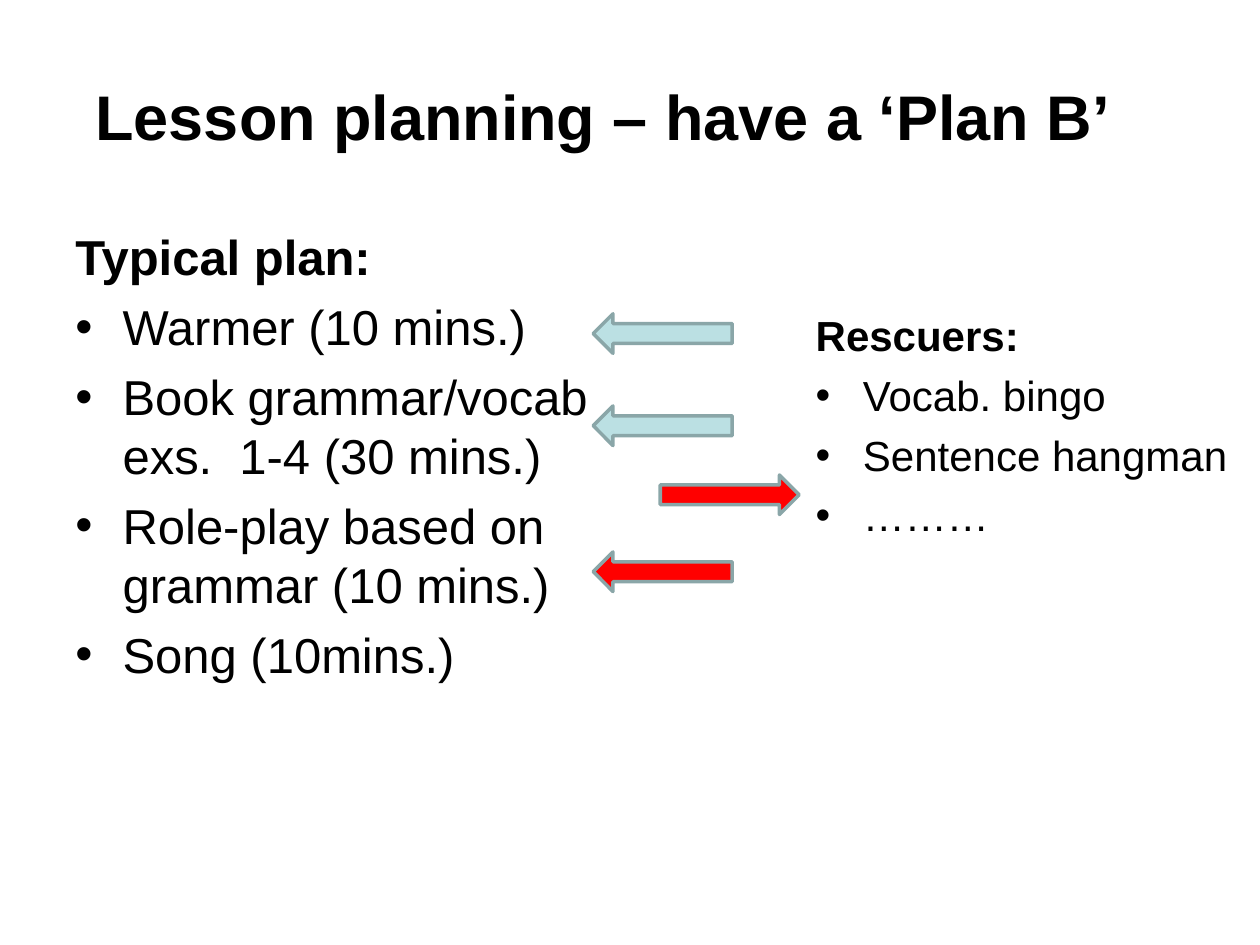
from dataclasses import dataclass

from lxml import etree
from pptx import Presentation
from pptx.dml.color import RGBColor
from pptx.enum.shapes import MSO_SHAPE
from pptx.enum.text import MSO_ANCHOR, PP_ALIGN
from pptx.oxml.ns import qn
from pptx.util import Pt

ARROW = MSO_SHAPE.LEFT_ARROW
LEFT = PP_ALIGN.LEFT
TOP, MIDDLE = MSO_ANCHOR.TOP, MSO_ANCHOR.MIDDLE


@dataclass(frozen=True)
class Theme:
    """Hold the colours and type sizes of the slide."""
    font: str = "Arial"
    ink: str = "000000"
    calm: str = "BBE0E3"
    alert: str = "FF0000"
    edge: str = "8AA6A8"
    title: int = 36
    plan: int = 28
    rescue: int = 24


THEME = Theme()


def color(code):
    """Turn a hex code into a colour."""
    return RGBColor.from_string(code)


def add_bullet(para, indent=27):
    """Give a paragraph a hanging bullet."""
    props = para._p.get_or_add_pPr()
    props.set("marL", str(Pt(indent)))
    props.set("indent", str(Pt(-indent)))
    etree.SubElement(props, qn("a:buFont")).set("typeface", THEME.font)
    etree.SubElement(props, qn("a:buChar")).set("char", "•")


def add_text(para, text, size, bold=False, bullet=False, before=0):
    """Write one formatted paragraph."""
    if bullet:
        add_bullet(para)
    para.alignment = LEFT
    para.space_before = Pt(before)
    run = para.add_run()
    run.text = text
    run.font.name = THEME.font
    run.font.size = Pt(size)
    run.font.bold = bold
    run.font.color.rgb = color(THEME.ink)


def add_box(slide, area, anchor=TOP):
    """Add a wrapping text box and return its frame."""
    frame = slide.shapes.add_textbox(*map(Pt, area)).text_frame
    frame.word_wrap = True
    frame.vertical_anchor = anchor
    return frame


def add_list(slide, area, head, items, size):
    """Add a bold heading with bullets below it."""
    frame = add_box(slide, area)
    add_text(frame.paragraphs[0], head, size, bold=True)
    for item in items:
        add_text(frame.add_paragraph(), item, size, bullet=True,
                 before=round(size * 0.23, 1))


def add_arrow(slide, left, top, fill, turn=0):
    """Add a block arrow, turned by the given degrees."""
    shape = slide.shapes.add_shape(ARROW, Pt(left), Pt(top), Pt(79.4), Pt(22.6))
    shape.shadow.inherit = False
    shape.rotation = turn
    shape.fill.solid()
    shape.fill.fore_color.rgb = color(fill)
    shape.line.color.rgb = color(THEME.edge)
    shape.line.width = Pt(2)


def main():
    """Build and save the slide."""
    deck = Presentation()
    deck.slide_width, deck.slide_height = Pt(720), Pt(540)
    slide = deck.slides.add_slide(deck.slide_layouts[6])

    title = add_box(slide, (47.5, 21, 648, 90), MIDDLE)
    add_text(title.paragraphs[0], "Lesson planning – have a ‘Plan B’",
             THEME.title, bold=True)
    add_list(slide, (36, 126, 318, 392), "Typical plan:", (
        "Warmer (10 mins.)",
        "Book grammar/vocab exs.  1-4 (30 mins.)",
        "Role-play based on grammar (10 mins.)",
        "Song (10mins.)",
    ), THEME.plan)
    add_list(slide, (459, 173.5, 284, 356), "Rescuers:", (
        "Vocab. bingo", "Sentence hangman", "………",
    ), THEME.rescue)

    for top, fill in ((232, THEME.calm), (179.3, THEME.calm),
                      (315.4, THEME.alert)):
        add_arrow(slide, 339, top, fill)
    add_arrow(slide, 377.3, 271.4, THEME.alert, turn=180)
    deck.save("out.pptx")


if __name__ == "__main__":
    main()
